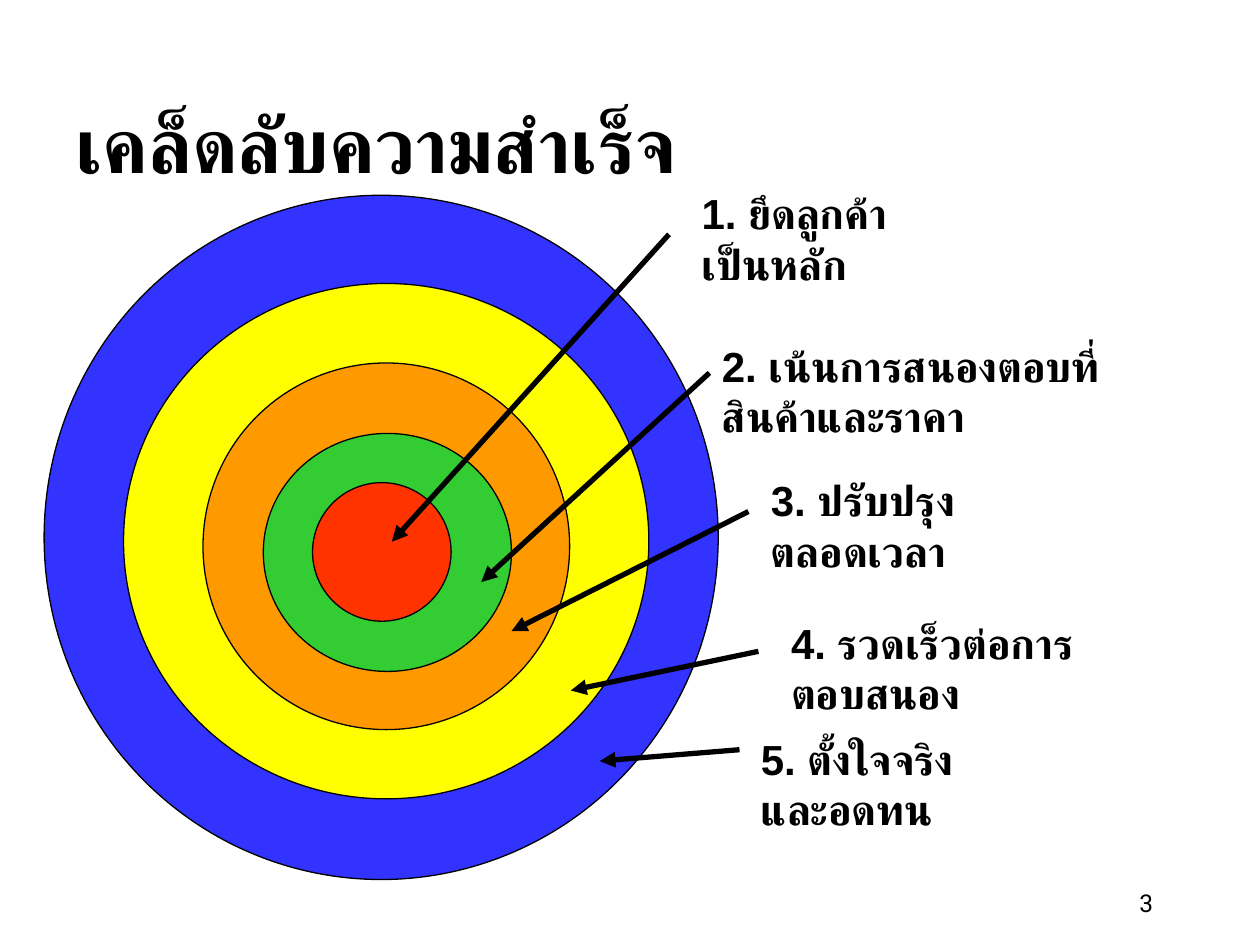
"""Build the target diagram slide on the secrets of success."""
import pptx
import pptx.dml.color
import pptx.enum.shapes
import pptx.enum.text
import pptx.oxml
import pptx.oxml.ns
import pptx.util

Pt = pptx.util.Pt
ANCHOR = pptx.enum.text.MSO_ANCHOR
ALIGN = pptx.enum.text.PP_ALIGN
FIT = pptx.enum.text.MSO_AUTO_SIZE

COLORS = {
    "ink": "000000",
    "background": "FFFFFF",
    "blue": "3333FF",
    "yellow": "FFFF00",
    "orange": "FF9900",
    "green": "33CC33",
    "red": "FF3300",
}

TITLE_FONT = {"name": "Arial", "size": Pt(44), "bold": True}
LABEL_FONT = {"name": "Arial", "size": Pt(24), "bold": True}
NUMBER_FONT = {"name": "Roboto", "size": Pt(14), "bold": False}
BOTTOM_FRAME = {"word_wrap": True, "vertical_anchor": ANCHOR.BOTTOM}
LABEL_FRAME = {
    "word_wrap": True,
    "vertical_anchor": ANCHOR.TOP,
    "auto_size": FIT.SHAPE_TO_FIT_TEXT,
}

RINGS = [
    ("blue", 25.2, 111.6, 385.2, 391),
    ("yellow", 70.6, 162, 300.2, 294.5),
    ("orange", 116, 207.4, 209.5, 209.5),
    ("green", 150.5, 247.7, 141.8, 136),
    ("red", 178.6, 275.8, 79.2, 79.2),
]

ARROWS = [
    (382.3, 133.9, 223.9, 309.6),
    (405.4, 213.1, 275, 332.6),
    (427.7, 292.3, 292.3, 360.7),
    (433.4, 372.2, 326.2, 394.6),
    (422.6, 428.4, 342.7, 434.9),
]

LABELS = [
    ("1. ยึดลูกค้าเป็นหลัก", 393.8, 103.7, 144.7),
    ("2. เน้นการสนองตอบที่สินค้าและราคา", 405.4, 190.8, 258.5),
    ("3. ปรับปรุงตลอดเวลา", 433.4, 267.8, 159.1),
    ("4. รวดเร็วต่อการตอบสนอง", 445, 349.2, 193),
    ("5. ตั้งใจจริงและอดทน", 427.7, 415.4, 158.4),
]
LABEL_HEIGHT = 36


def rgb(name):
    """Return the named colour."""
    return pptx.dml.color.RGBColor.from_string(COLORS[name])


def apply_format(target, values):
    """Set every attribute in values on the target."""
    for name, value in values.items():
        setattr(target, name, value)


def add_text(slide, text, box, font, frame_format, alignment=ALIGN.LEFT):
    """Add a text box holding one paragraph."""
    frame = slide.shapes.add_textbox(*map(Pt, box)).text_frame
    apply_format(frame, frame_format)
    paragraph = frame.paragraphs[0]
    paragraph.alignment = alignment
    run = paragraph.add_run()
    run.text = text
    apply_format(run.font, font)
    run.font.color.rgb = rgb("ink")


def add_ring(slide, color, *box):
    """Add one outlined disc of the target."""
    oval = pptx.enum.shapes.MSO_SHAPE.OVAL
    shape = slide.shapes.add_shape(oval, *map(Pt, box))
    shape.shadow.inherit = False
    shape.fill.solid()
    shape.fill.fore_color.rgb = rgb(color)
    shape.line.color.rgb = rgb("ink")
    shape.line.width = Pt(0.75)


def add_arrow(slide, *ends):
    """Add a straight arrow from a label to its ring."""
    straight = pptx.enum.shapes.MSO_CONNECTOR.STRAIGHT
    connector = slide.shapes.add_connector(straight, *map(Pt, ends))
    connector.line.color.rgb = rgb("ink")
    connector.line.width = Pt(3)
    head = pptx.oxml.parse_xml(
        f'<a:tailEnd {pptx.oxml.ns.nsdecls("a")} type="triangle"/>')
    connector.line._get_or_add_ln().append(head)
    effects = pptx.oxml.parse_xml(f'<a:effectLst {pptx.oxml.ns.nsdecls("a")}/>')
    connector._element.spPr.append(effects)


def main():
    """Build and save the presentation."""
    presentation = pptx.Presentation()
    presentation.slide_width, presentation.slide_height = Pt(720), Pt(540)
    slide = presentation.slides.add_slide(presentation.slide_layouts[6])
    slide.background.fill.solid()
    slide.background.fill.fore_color.rgb = rgb("background")

    add_text(slide, "เคล็ดลับความสำเร็จ", (36, 9.4, 594, 102.2),
             TITLE_FONT, BOTTOM_FRAME)
    for ring in RINGS:
        add_ring(slide, *ring)
    for arrow in ARROWS:
        add_arrow(slide, *arrow)
    for text, left, top, width in LABELS:
        add_text(slide, text, (left, top, width, LABEL_HEIGHT),
                 LABEL_FONT, LABEL_FRAME)
    add_text(slide, "3", (516.2, 491.8, 149.8, 36),
             NUMBER_FONT, BOTTOM_FRAME, ALIGN.RIGHT)
    presentation.save("out.pptx")


if __name__ == "__main__":
    main()
